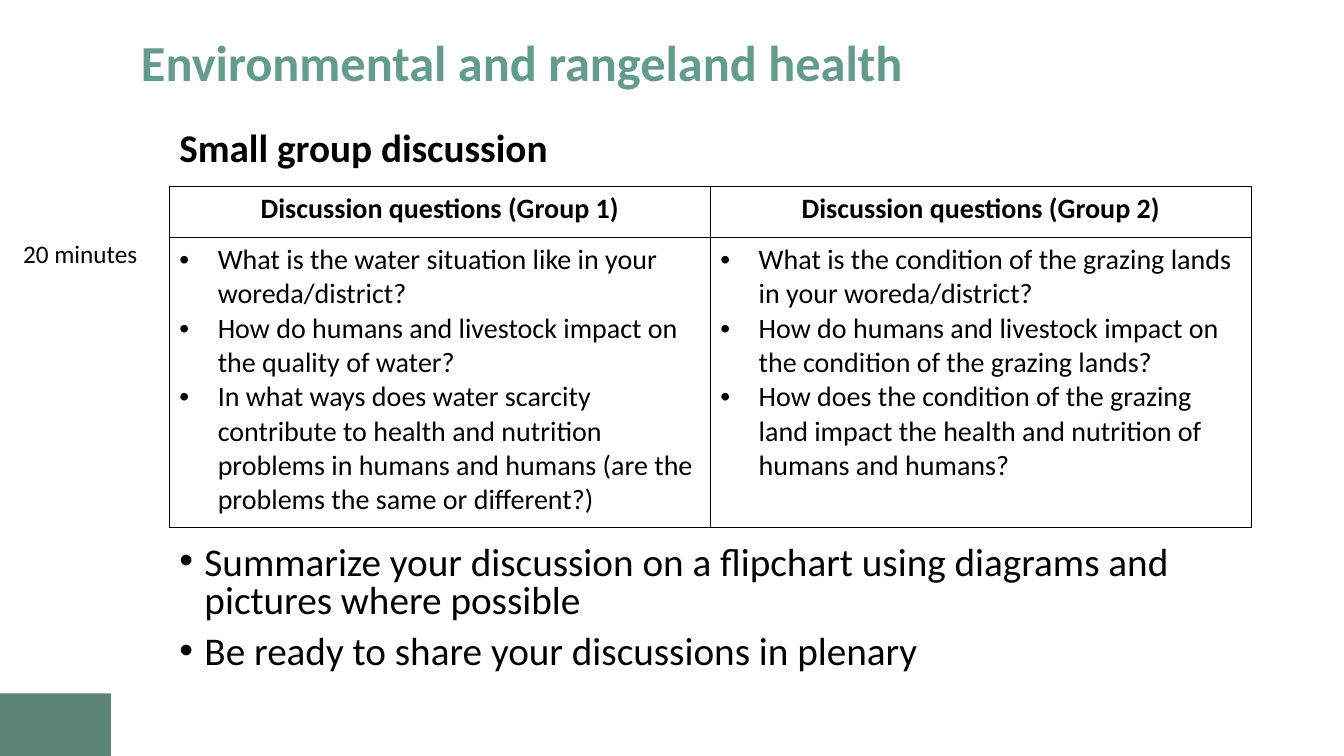
from lxml.etree import SubElement as Sub
from pptx import Presentation
from pptx.dml.color import RGBColor as RGB
from pptx.enum.shapes import MSO_SHAPE as Shape
from pptx.enum.text import MSO_ANCHOR as Anchor, PP_ALIGN as Align
from pptx.oxml.ns import qn
from pptx.util import Inches, Pt

COLORS = {"title": "639C8C", "block": "5B8477", "text": "000000"}
LEFT, WIDTH = 1.68, 10.73


def write(frame, lines, size, color="text", bold=False, indent=0, **format):
    frame.word_wrap = True
    for i, line in enumerate(lines):
        para = frame.paragraphs[0] if i == 0 else frame.add_paragraph()
        para.text = line
        for name, value in format.items():
            if name != "space_before" or i > 0:
                setattr(para, name, value)
        if indent:
            props = para._p.get_or_add_pPr()
            props.set("marL", str(Inches(indent)))
            props.set("indent", str(-Inches(indent)))
            Sub(props, qn("a:buFont"), typeface="Arial")
            Sub(props, qn("a:buChar"), char="•")
        values = {"name": "Calibri", "size": Pt(size), "bold": bold}
        for name, value in values.items():
            setattr(para.font, name, value)
        para.font.color.rgb = RGB.from_string(COLORS[color])


def add_text(left, top, width, height, lines, size, **format):
    box = slide.shapes.add_textbox(*map(Inches, (left, top, width, height)))
    write(box.text_frame, lines, size, **format)
    return box


prs = Presentation()
prs.slide_width, prs.slide_height = Inches(13.33), Inches(7.5)
slide = prs.slides.add_slide(prs.slide_layouts[6])

# Corner block
block = slide.shapes.add_shape(
    Shape.RECTANGLE, 0, Inches(6.88), Inches(1.1), Inches(0.62))
block.shadow.inherit = False
block.fill.solid()
block.fill.fore_color.rgb = RGB.from_string(COLORS["block"])
block.line.fill.background()

# Title and heading
title = add_text(1.3, 0.29, 11.11, 0.71, ["Environmental and rangeland health"],
                 36, color="title", bold=True, line_spacing=0.9)
title.text_frame.vertical_anchor = Anchor.MIDDLE
add_text(LEFT, 1.26, WIDTH, 0.5, ["Small group discussion"], 28,
         bold=True, line_spacing=0.8)

# Question table
groups = {
    "Discussion questions (Group 1)": [
        "What is the water situation like in your woreda/district?",
        "How do humans and livestock impact on the quality of water?",
        "In what ways does water scarcity contribute to health and nutrition "
        "problems in humans and humans (are the problems the same or different?)",
    ],
    "Discussion questions (Group 2)": [
        "What is the condition of the grazing lands in your woreda/district?",
        "How do humans and livestock impact on the condition of the grazing lands?",
        "How does the condition of the grazing land impact the health and "
        "nutrition of humans and humans?",
    ],
}
table = slide.shapes.add_table(
    2, 2, *map(Inches, (LEFT, 1.85, WIDTH, 3.38))).table
table.first_row = table.horz_banding = False
for row, height in zip(table.rows, (0.51, 2.87)):
    row.height = Inches(height)
for col, (head, asks) in enumerate(groups.items()):
    write(table.cell(0, col).text_frame, [head], 20, bold=True,
          alignment=Align.CENTER)
    write(table.cell(1, col).text_frame, asks, 20, indent=0.38)
for cell in table.iter_cells():
    props = cell._tc.get_or_add_tcPr()
    for side in ("lnL", "lnR", "lnT", "lnB"):
        line = Sub(props, qn("a:" + side), w=str(Pt(1)))
        fill = Sub(line, qn("a:solidFill"))
        Sub(fill, qn("a:srgbClr"), val=COLORS["text"])
    cell.fill.background()

# Closing tasks
tasks = [
    "Summarize your discussion on a flipchart using diagrams and pictures "
    "where possible",
    "Be ready to share your discussions in plenary",
]
add_text(LEFT, 5.37, WIDTH, 1.39, tasks, 28, indent=0.25,
         line_spacing=0.8, space_before=Pt(10))

# Time note
add_text(0.1, 2.32, 1.39, 0.4, ["20 minutes"], 18, alignment=Align.CENTER)

prs.save("out.pptx")
